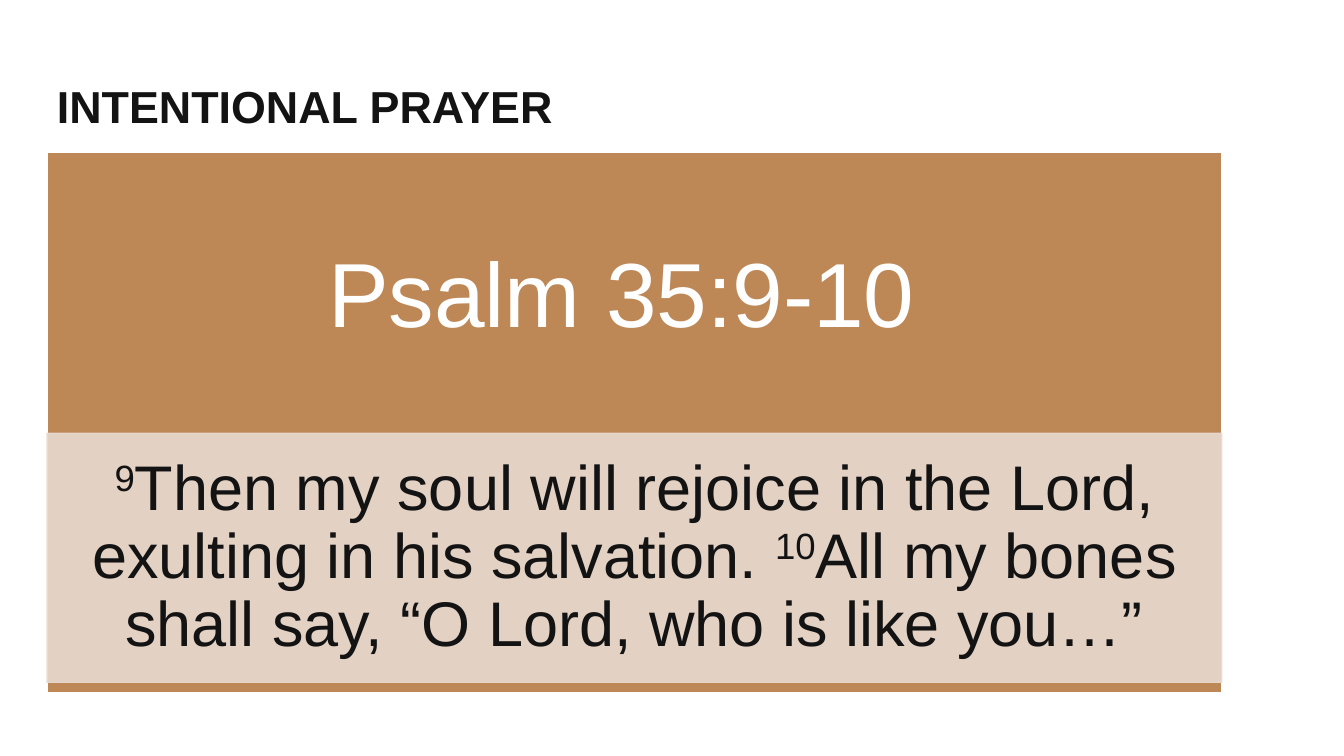
from lxml.etree import SubElement
from pptx import Presentation
from pptx.dml.color import RGBColor
from pptx.enum.shapes import MSO_SHAPE
from pptx.enum.text import MSO_ANCHOR, PP_ALIGN
from pptx.oxml.ns import qn
from pptx.util import Inches, Pt

INK, WHITE, COPPER, SAND = "131313", "FFFFFF", "BE8856", "E8DAD1"


def color(hex_string):
    return RGBColor.from_string(hex_string)


class VerseSlide:
    """Style and current slide; lengths are percentages of the slide's size."""

    font = "Arial"
    line_spacing = 0.9
    left, width = 3.5, 87.4

    def __init__(self, deck):
        self.deck = deck
        self.page = deck.slides.add_slide(deck.slide_layouts[6])

    def frame(self, top, height):
        across, down = self.deck.slide_width / 100, self.deck.slide_height / 100
        return (int(self.left * across), int(top * down),
                int(self.width * across), int(height * down))

    def panel(self, top, height, fill, line, opacity=100):
        box = self.page.shapes.add_shape(MSO_SHAPE.RECTANGLE, *self.frame(top, height))
        box.shadow.inherit = False
        box.fill.solid()
        box.fill.fore_color.rgb = color(fill)
        box.line.color.rgb = color(line)
        box.line.width = Pt(1)
        if opacity < 100:
            for tone in box._element.spPr.iter(qn("a:srgbClr")):
                SubElement(tone, qn("a:alpha"), val=str(opacity * 1000))

    def text(self, top, height, runs, size, ink, anchor=MSO_ANCHOR.MIDDLE,
             align=PP_ALIGN.CENTER, bold=False, insets=(0.1, 0.05)):
        """Each run is a pair: its wording and whether it is raised."""
        box = self.page.shapes.add_textbox(*self.frame(top, height))
        body = box.text_frame
        body.word_wrap = True
        body.vertical_anchor = anchor
        body.margin_left = body.margin_right = Inches(insets[0])
        body.margin_top = body.margin_bottom = Inches(insets[1])
        para = body.paragraphs[0]
        para.alignment = align
        para.line_spacing = self.line_spacing
        for wording, raised in runs:
            span = para.add_run()
            span.text = wording
            span.font.name = self.font
            span.font.size = Pt(size)
            span.font.bold = bold
            span.font.color.rgb = color(ink)
            if raised:
                span._r.get_or_add_rPr().set("baseline", "30000")


def main():
    deck = Presentation()
    deck.slide_width, deck.slide_height = Inches(13.33), Inches(7.5)
    slide = VerseSlide(deck)

    # Heading
    slide.text(4.13, 14.13, [("INTENTIONAL PRAYER", False)], 32, INK,
               anchor=MSO_ANCHOR.BOTTOM, align=PP_ALIGN.LEFT, bold=True)

    # Scripture reference
    slide.panel(20.13, 71.47, COPPER, WHITE)
    slide.text(20.13, 38.53, [("Psalm 35:9-10 ", False)], 65, WHITE, insets=(0.51, 0.51))

    # Verse text with raised verse numbers
    verse_band = (57.33, 32.93)
    slide.panel(*verse_band, SAND, SAND, opacity=90)
    slide.text(*verse_band, [
        ("9", True),
        ("Then my soul will rejoice in the Lord, exulting in his salvation. ", False),
        ("10", True),
        ("All my bones shall say, “O Lord, who is like you…”", False),
    ], 45, INK, insets=(0.35, 0.06))

    deck.save("out.pptx")


if __name__ == "__main__":
    main()
